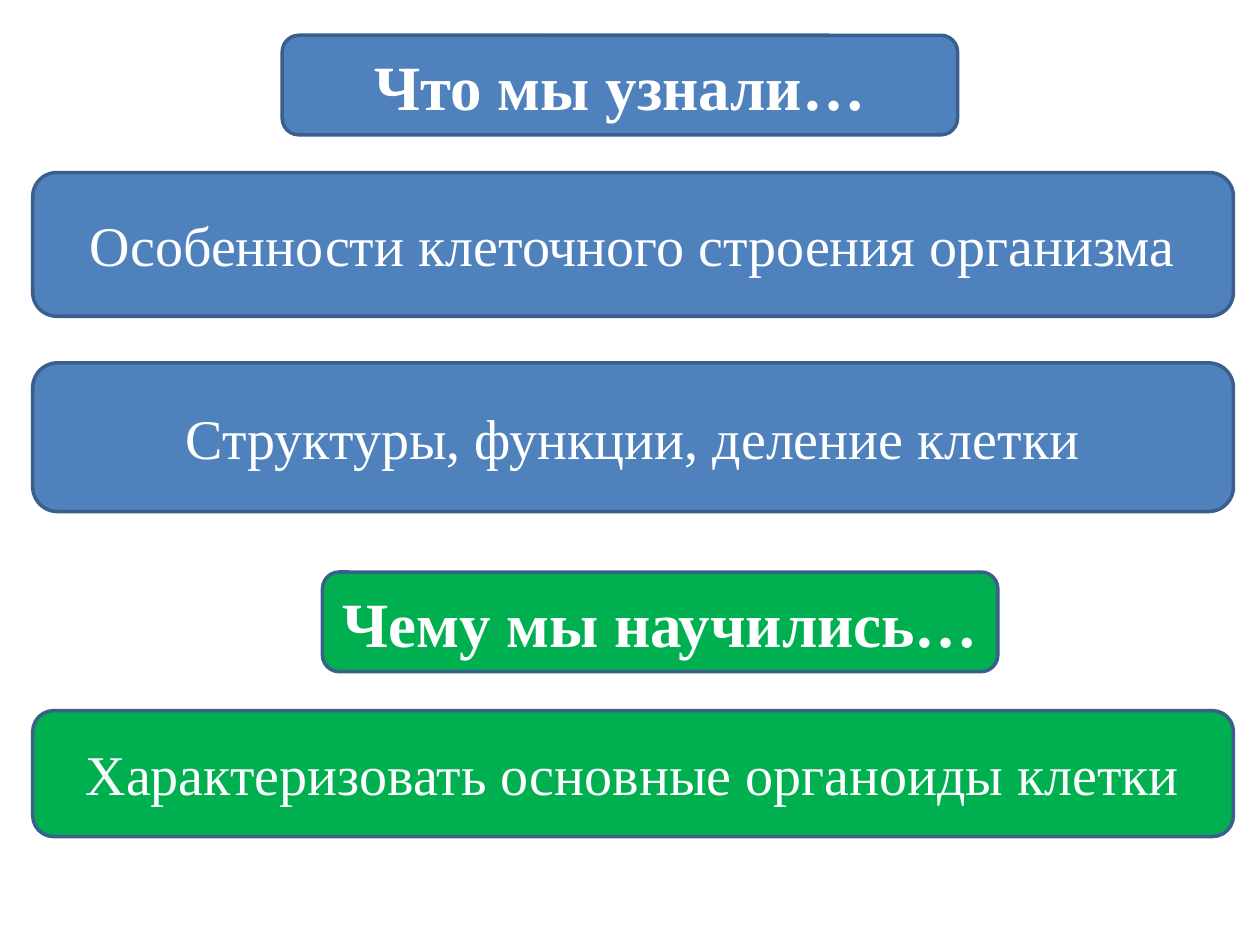
from pptx import Presentation
from pptx.dml.color import RGBColor
from pptx.enum.shapes import MSO_SHAPE
from pptx.enum.text import MSO_ANCHOR, PP_ALIGN
from pptx.util import Inches, Pt

ROUNDED = MSO_SHAPE.ROUNDED_RECTANGLE
MIDDLE = MSO_ANCHOR.MIDDLE
CENTER = PP_ALIGN.CENTER

BLUE, GREEN, OUTLINE, WHITE = "4F81BD", "00B050", "3A5F8C", "FFFFFF"
HEADING = {"size": 36, "bold": True}
STATEMENT = {"size": 32, "bold": False}
HEADING_WIDTH, HEADING_HEIGHT = 5.36, 0.79
STATEMENT_LEFT, STATEMENT_WIDTH = 0.26, 9.53


def color(hex_string):
    return RGBColor.from_string(hex_string)


def write(box, text, size, bold, font="Times New Roman", fill=WHITE):
    frame = box.text_frame
    frame.word_wrap = True
    frame.vertical_anchor = MIDDLE
    para = frame.paragraphs[0]
    para.alignment = CENTER
    span = para.add_run()
    span.text = text
    span.font.name = font
    span.font.size = Pt(size)
    span.font.bold = bold
    span.font.color.rgb = color(fill)


deck = Presentation()
deck.slide_width, deck.slide_height = Inches(10), Inches(7.5)
page = deck.slides.add_slide(deck.slide_layouts[6])

# text, left, top, width, height, fill, text format
boxes = [
    ("Что мы узнали…", 2.24, 0.28, HEADING_WIDTH, HEADING_HEIGHT, BLUE, HEADING),
    ("Особенности клеточного строения организма",
     STATEMENT_LEFT, 1.37, STATEMENT_WIDTH, 1.14, BLUE, STATEMENT),
    ("Структуры, функции, деление клетки",
     STATEMENT_LEFT, 2.88, STATEMENT_WIDTH, 1.18, BLUE, STATEMENT),
    ("Чему мы научились…", 2.56, 4.54, HEADING_WIDTH, HEADING_HEIGHT, GREEN, HEADING),
    ("Характеризовать основные органоиды клетки",
     STATEMENT_LEFT, 5.64, STATEMENT_WIDTH, 1, GREEN, STATEMENT),
]

for text, left, top, width, height, fill, text_format in boxes:
    box = page.shapes.add_shape(
        ROUNDED, Inches(left), Inches(top), Inches(width), Inches(height))
    box.shadow.inherit = False
    box.fill.solid()
    box.fill.fore_color.rgb = color(fill)
    box.line.color.rgb = color(OUTLINE)
    box.line.width = Pt(2)
    write(box, text, **text_format)

deck.save("out.pptx")
